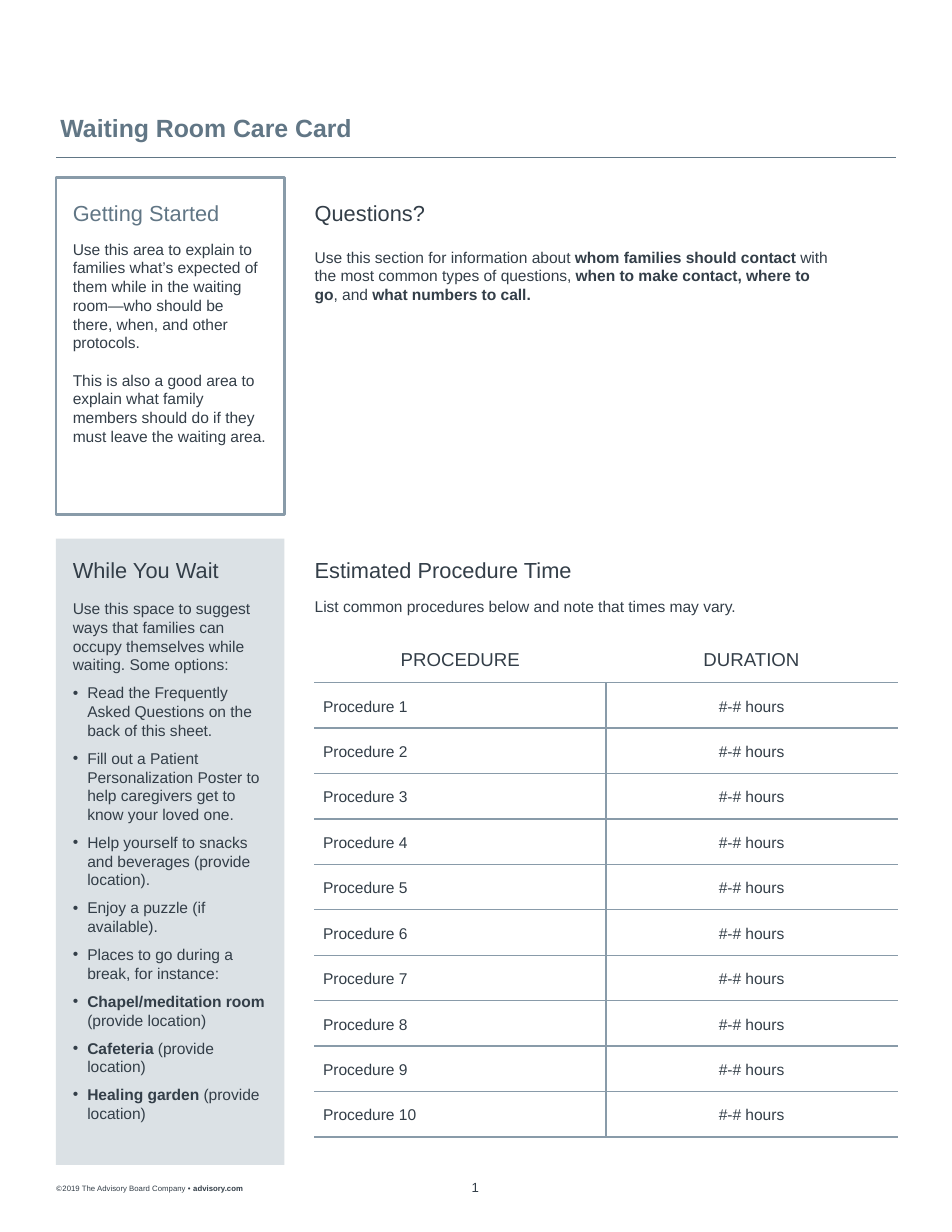
import pptx
import pptx.util
import pptx.dml.color
import pptx.enum.shapes
import pptx.enum.text
import pptx.oxml.ns
from lxml import etree

Pt = pptx.util.Pt
RGB = pptx.dml.color.RGBColor
ALIGN = pptx.enum.text.PP_ALIGN
MIDDLE = pptx.enum.text.MSO_ANCHOR.MIDDLE
qn = pptx.oxml.ns.qn

INK = RGB(0x33, 0x3E, 0x48)
SLATE = RGB(0x61, 0x76, 0x85)
STEEL = RGB(0x89, 0x9B, 0xA9)
MIST = RGB(0xDB, 0xE1, 0xE5)
WHITE = RGB(0xFF, 0xFF, 0xFF)

SIDE_LEFT, SIDE_WIDTH = 46.8, 124.6
MAIN_LEFT, MAIN_WIDTH = 202.3, 374.4
HEADING_HEIGHT = 17.3


def bold(text):
    return text, {"bold": True}


def write_text(frame, paragraphs, size=10, color=INK, font="Arial", align=ALIGN.LEFT,
               gap=0, line_spacing=None, bullets_from=None):
    """Fill a frame; a paragraph is a string or a list of strings and (text, format) runs."""
    for index, runs in enumerate(paragraphs):
        paragraph = frame.paragraphs[0] if index == 0 else frame.add_paragraph()
        if bullets_from is not None and index >= bullets_from:
            properties = paragraph._p.get_or_add_pPr()
            properties.set("marL", str(Pt(9.36)))
            properties.set("indent", str(-Pt(9.36)))
            etree.SubElement(properties, qn("a:buFont"), typeface="Arial")
            etree.SubElement(properties, qn("a:buChar"), char="•")
        paragraph.alignment = align
        if index:
            paragraph.space_before = Pt(gap)
        if line_spacing:
            paragraph.line_spacing = line_spacing
        for part in [runs] if isinstance(runs, str) else runs:
            text, style = (part, {}) if isinstance(part, str) else part
            run = paragraph.add_run()
            run.text = text
            run.font.size = Pt(size)
            run.font.color.rgb = color
            run.font.name = style.get("font", font)
            run.font.bold = style.get("bold", False)


class CareCard:
    def __init__(self, slide):
        self.slide = slide
        self.border_width = 1

    def text(self, left, top, width, height, paragraphs, insets=(0, 0, 0, 0),
             anchor=pptx.enum.text.MSO_ANCHOR.TOP, **style):
        box = self.slide.shapes.add_textbox(Pt(left), Pt(top), Pt(width), Pt(height))
        frame = box.text_frame
        frame.word_wrap = True
        frame.vertical_anchor = anchor
        (frame.margin_left, frame.margin_top,
         frame.margin_right, frame.margin_bottom) = map(Pt, insets)
        write_text(frame, paragraphs, **style)

    def heading(self, left, top, title, color=INK):
        width = SIDE_WIDTH if left == SIDE_LEFT else MAIN_WIDTH
        self.text(left, top, width, HEADING_HEIGHT, [title], size=14, color=color)

    def panel(self, left, top, width, height, fill=None, outline=None):
        panel = self.slide.shapes.add_shape(
            pptx.enum.shapes.MSO_SHAPE.RECTANGLE, Pt(left), Pt(top), Pt(width), Pt(height))
        panel.shadow.inherit = False
        if fill is None:
            panel.fill.background()
        else:
            panel.fill.solid()
            panel.fill.fore_color.rgb = fill
        if outline is None:
            panel.line.fill.background()
        else:
            panel.line.color.rgb = outline
            panel.line.width = Pt(1.75)

    def rule(self, left, right, y):
        rule = self.slide.shapes.add_connector(
            pptx.enum.shapes.MSO_CONNECTOR.STRAIGHT, Pt(left), Pt(y), Pt(right), Pt(y))
        rule.line.color.rgb = SLATE
        rule.line.width = Pt(0.5)
        etree.SubElement(rule._element.spPr, qn("a:effectLst"))

    def cell_borders(self, cell, **colors):
        properties = cell._tc.get_or_add_tcPr()
        for side in "LRTB":
            line = etree.SubElement(properties, qn(f"a:ln{side}"), w=str(Pt(self.border_width)))
            fill = etree.SubElement(line, qn("a:solidFill"))
            etree.SubElement(fill, qn("a:srgbClr"), val=str(colors[side]))

    def table(self, left, top, width, row_height, rows):
        columns = len(rows[0])
        table = self.slide.shapes.add_table(
            len(rows), columns, Pt(left), Pt(top), Pt(width), Pt(row_height * len(rows))).table
        table.first_row = table.horz_banding = False
        for r, row in enumerate(rows):
            table.rows[r].height = Pt(row_height)
            for c, label in enumerate(row):
                cell = table.cell(r, c)
                header = r == 0
                inner = WHITE if header else STEEL
                self.cell_borders(cell, L=inner if c else WHITE,
                                  R=WHITE if c == columns - 1 else inner,
                                  T=inner, B=STEEL)
                cell.fill.background()
                cell.vertical_anchor = MIDDLE
                if not header:
                    cell.margin_left = cell.margin_right = Pt(5.4)
                    cell.margin_top = cell.margin_bottom = 0
                write_text(cell.text_frame, [label], size=12 if header else 10,
                           align=ALIGN.CENTER if header or c else ALIGN.LEFT,
                           line_spacing=None if header else 1.15)


def main():
    deck = pptx.Presentation()
    deck.slide_width, deck.slide_height = Pt(612), Pt(792)
    card = CareCard(deck.slides.add_slide(deck.slide_layouts[6]))

    # Footer
    card.text(289.4, 758.2, 32.4, 10.1, ["1"], size=8.5, align=ALIGN.CENTER)
    copyright_line = [("©", {"font": "Calibri"}), "2019 The Advisory Board Company • ",
                      bold("advisory.com")]
    card.text(32.4, 757.6, 280.8, 11.5, [copyright_line], size=5,
              insets=(3.6, 3.6, 0, 2.16), anchor=MIDDLE)

    # Title
    card.rule(36, 576, 101.2)
    card.text(38.9, 72.7, 380.9, 19.4, [[bold("Waiting Room Care Card")]], size=16, color=SLATE)

    # Getting started
    card.panel(36, 114, 146.9, 216.7, outline=STEEL)
    card.heading(SIDE_LEFT, 128.2, "Getting Started", SLATE)
    card.text(SIDE_LEFT, 154.1, SIDE_WIDTH, 133.2, [
        "Use this area to explain to families what’s expected of them while in the waiting "
        "room—who should be there, when, and other protocols.",
        "This is also a good area to explain what family members should do if they must "
        "leave the waiting area.",
    ], gap=12)

    # Questions
    card.heading(MAIN_LEFT, 128.2, "Questions?")
    card.text(MAIN_LEFT, 159.1, 332.6, 169.9, [[
        "Use this section for information about ", bold("whom families should contact "),
        "with the most common types of questions, ", bold("when to make contact, where to go"),
        ", and ", bold("what numbers to call."),
    ]])

    # While you wait
    card.panel(36, 346.3, 146.9, 402.5, fill=MIST)
    card.heading(SIDE_LEFT, 357.8, "While You Wait")
    places = [[bold(place + " "), "(provide location)"]
              for place in ("Chapel/meditation room", "Cafeteria", "Healing garden")]
    card.text(SIDE_LEFT, 385.2, SIDE_WIDTH, 351.4, [
        "Use this space to suggest ways that families can occupy themselves while waiting. "
        "Some options:",
        "Read the Frequently Asked Questions on the back of this sheet.",
        "Fill out a Patient Personalization Poster to help caregivers get to know your loved one.",
        "Help yourself to snacks and beverages (provide location).",
        "Enjoy a puzzle (if available).",
        "Places to go during a break, for instance:",
        *places,
    ], gap=6, bullets_from=1)

    # Estimated procedure time
    card.heading(MAIN_LEFT, 357.8, "Estimated Procedure Time")
    card.text(MAIN_LEFT, 383.8, MAIN_WIDTH, 12.2,
              ["List common procedures below and note that times may vary."])
    procedures = [(f"Procedure {number}", "#-# hours") for number in range(1, 11)]
    card.table(MAIN_LEFT, 409.7, MAIN_WIDTH, 29.2, [("PROCEDURE", "DURATION"), *procedures])

    deck.save("out.pptx")


if __name__ == "__main__":
    main()
